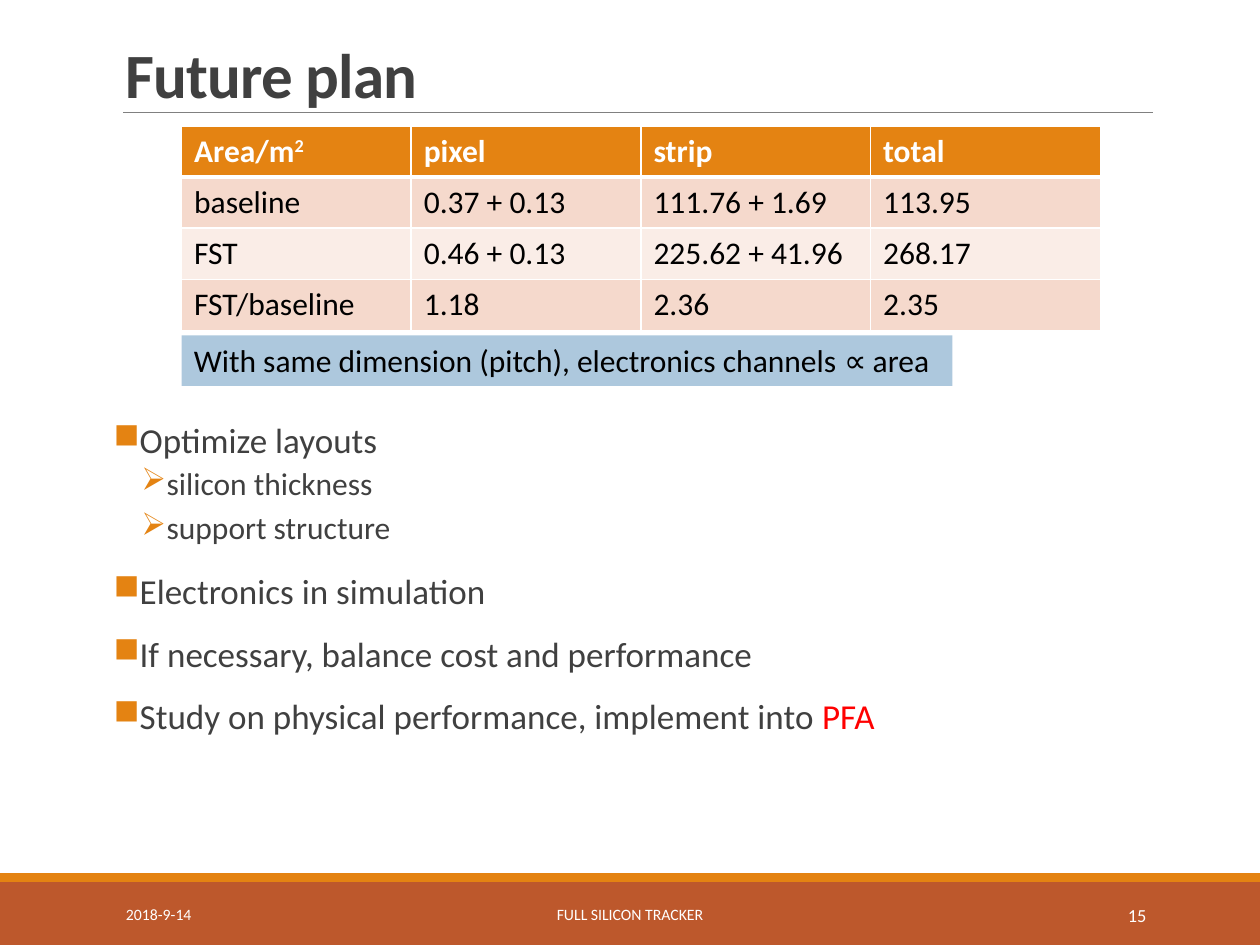
import lxml.etree
import pptx
import pptx.dml.color
import pptx.enum.shapes
import pptx.enum.text
import pptx.oxml.ns
import pptx.util

Cm = pptx.util.Cm
Pt = pptx.util.Pt
qn = pptx.oxml.ns.qn
ANCHOR = pptx.enum.text.MSO_ANCHOR
ALIGN = pptx.enum.text.PP_ALIGN
COLORS = {
    "white": "FFFFFF",
    "black": "000000",
    "text": "404040",
    "rule": "808080",
    "orange": "E48312",
    "rust": "BD582C",
    "band_dark": "F5D9CC",
    "band_light": "FAEDE7",
    "note": "ADC8DD",
    "highlight": "FF0000",
}


def rgb(name):
    return pptx.dml.color.RGBColor.from_string(COLORS[name])


def style_runs(paragraph, size, color, bold=False):
    for run in paragraph.runs:
        run.font.name = "Calibri"
        run.font.size = Pt(size)
        run.font.bold = bold
        run.font.color.rgb = rgb(color)


deck = pptx.Presentation()
deck.slide_width = Cm(25.4)
deck.slide_height = Cm(19.05)
slide = deck.slides.add_slide(deck.slide_layouts[6])
shapes = slide.shapes

for top, height, color in [(17.78, 1.27, "rust"), (17.6, 0.18, "orange")]:
    footer_band = shapes.add_shape(
        pptx.enum.shapes.MSO_SHAPE.RECTANGLE, 0, Cm(top), deck.slide_width, Cm(height))
    footer_band.shadow.inherit = False
    footer_band.fill.solid()
    footer_band.fill.fore_color.rgb = rgb(color)
    footer_band.line.fill.background()

title_rule = shapes.add_connector(
    pptx.enum.shapes.MSO_CONNECTOR.STRAIGHT, Cm(2.48), Cm(2.26), Cm(23.24), Cm(2.26))
title_rule.line.color.rgb = rgb("rule")
title_rule.line.width = Pt(0.5)
lxml.etree.SubElement(title_rule._element.spPr, qn("a:effectLst"))

title = shapes.add_textbox(Cm(2.29), Cm(0.36), Cm(20.96), Cm(2.01)).text_frame
title.word_wrap = True
title.vertical_anchor = ANCHOR.BOTTOM
title.text = "Future plan"
title.paragraphs[0].line_spacing = 0.85
style_runs(title.paragraphs[0], 36, "text", bold=True)
title.paragraphs[0].runs[0].font._element.set("spc", "-50")

plans = [
    (0, ["Optimize layouts"]),
    (1, ["silicon thickness"]),
    (1, ["support structure"]),
    (0, ["Electronics in simulation"]),
    (0, ["If necessary, balance cost and performance"]),
    (0, ["Study on physical performance, implement into ", "PFA"]),
]
levels = [
    {"bullet": "■", "size": 20, "margin": 0.25, "hang": 0.25, "before": 12, "after": 2},
    {"bullet": "➢", "size": 18, "margin": 1.07, "hang": 0.51, "before": 2, "after": 4},
]
plan_frame = shapes.add_textbox(Cm(2.29), Cm(8.41), Cm(20.96), Cm(8.51)).text_frame
plan_frame.word_wrap = True
plan_frame.margin_left = plan_frame.margin_right = 0
for index, (depth, parts) in enumerate(plans):
    plan = plan_frame.add_paragraph() if index else plan_frame.paragraphs[0]
    level = levels[depth]
    plan.level = depth
    plan.line_spacing = 0.9
    plan.space_before = Pt(level["before"])
    plan.space_after = Pt(level["after"])
    for part in parts:
        plan.add_run().text = part
    style_runs(plan, level["size"], "text")
    properties = plan._p.get_or_add_pPr()
    properties.set("marL", str(Cm(level["margin"])))
    properties.set("indent", str(-Cm(level["hang"])))
    bullet_color = lxml.etree.SubElement(properties, qn("a:buClr"))
    lxml.etree.SubElement(bullet_color, qn("a:srgbClr"), val=COLORS["orange"])
    lxml.etree.SubElement(properties, qn("a:buChar"), char=level["bullet"])
plan.runs[-1].font.color.rgb = rgb("highlight")

areas = [
    ["Area/m", "pixel", "strip", "total"],
    ["baseline", "0.37 + 0.13", "111.76 + 1.69", "113.95"],
    ["FST", "0.46 + 0.13", "225.62 + 41.96", "268.17"],
    ["FST/baseline", "1.18", "2.36", "2.35"],
]
row_fills = ["orange", "band_dark", "band_light", "band_dark"]
area_table = shapes.add_table(4, 4, Cm(3.66), Cm(2.54), Cm(18.52), Cm(4.12)).table
for row, values in enumerate(areas):
    area_table.rows[row].height = Cm(1.03)
    for column, value in enumerate(values):
        area_table.columns[column].width = Cm(4.63)
        cell = area_table.cell(row, column)
        cell.text = value
        entry = cell.text_frame.paragraphs[0]
        if row == column == 0:
            exponent = entry.add_run()
            exponent.text = "2"
            exponent.font._element.set("baseline", "30000")
        style_runs(entry, 18, "black" if row else "white", bold=row == 0)
        cell_properties = cell._tc.get_or_add_tcPr()
        for side in ["lnL", "lnR", "lnT", "lnB"]:
            thick = (row, side) in [(0, "lnB"), (1, "lnT")]
            border = lxml.etree.SubElement(
                cell_properties, qn("a:" + side), w=str(Pt(3 if thick else 1)))
            border_fill = lxml.etree.SubElement(border, qn("a:solidFill"))
            lxml.etree.SubElement(border_fill, qn("a:srgbClr"), val=COLORS["white"])
        cell.fill.solid()
        cell.fill.fore_color.rgb = rgb(row_fills[row])

channel_note = shapes.add_textbox(Cm(3.66), Cm(6.76), Cm(15.54), Cm(1.02))
channel_note.fill.solid()
channel_note.fill.fore_color.rgb = rgb("note")
channel_note.text_frame.word_wrap = False
channel_note.text_frame.auto_size = pptx.enum.text.MSO_AUTO_SIZE.SHAPE_TO_FIT_TEXT
channel_note.text_frame.text = "With same dimension (pitch), electronics channels ∝ area"
style_runs(channel_note.text_frame.paragraphs[0], 18, "black")

footers = [
    ("2018-9-14", 2.29, 5.16, 9, ALIGN.LEFT),
    ("FULL SILICON TRACKER", 7.67, 10.06, 9, ALIGN.CENTER),
    ("15", 20.62, 2.74, 10.5, ALIGN.RIGHT),
]
for text, left, width, size, alignment in footers:
    footer = shapes.add_textbox(Cm(left), Cm(17.93), Cm(width), Cm(1.02)).text_frame
    footer.word_wrap = True
    footer.vertical_anchor = ANCHOR.MIDDLE
    footer.text = text
    footer.paragraphs[0].alignment = alignment
    style_runs(footer.paragraphs[0], size, "white")

deck.save("out.pptx")
